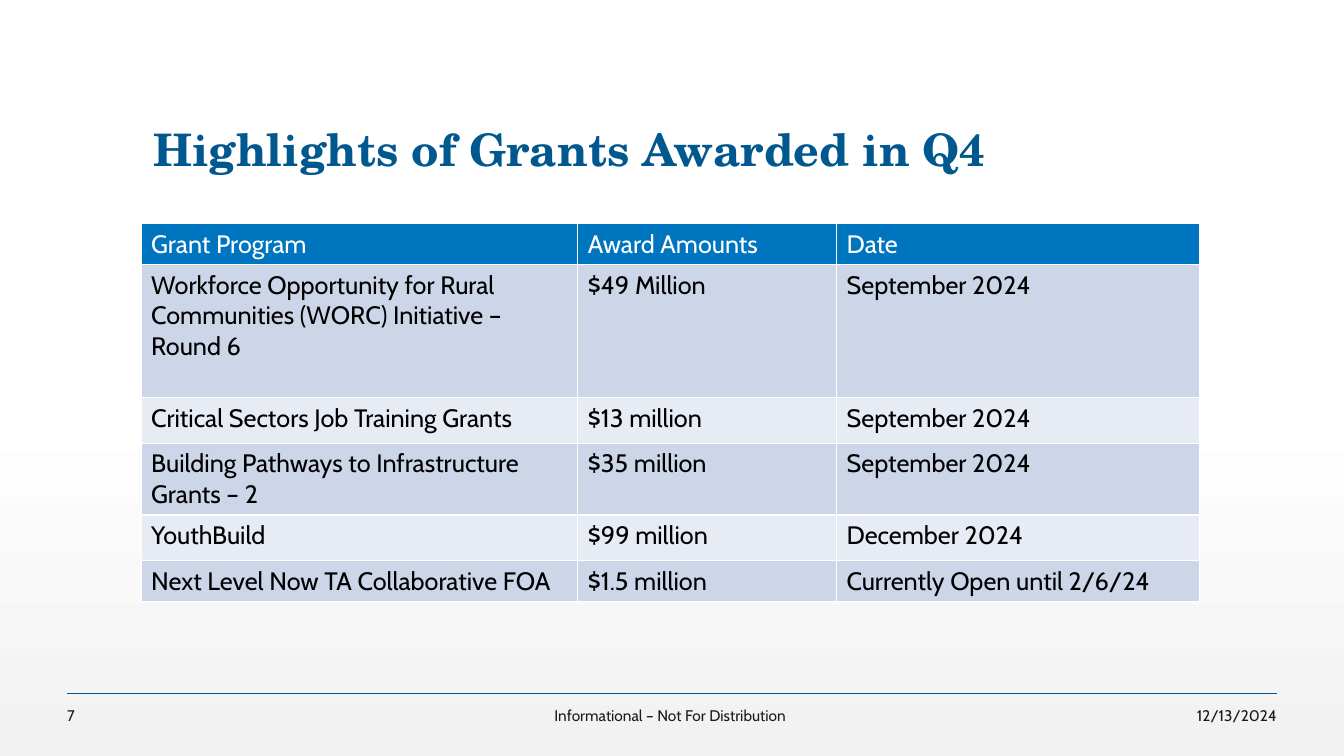
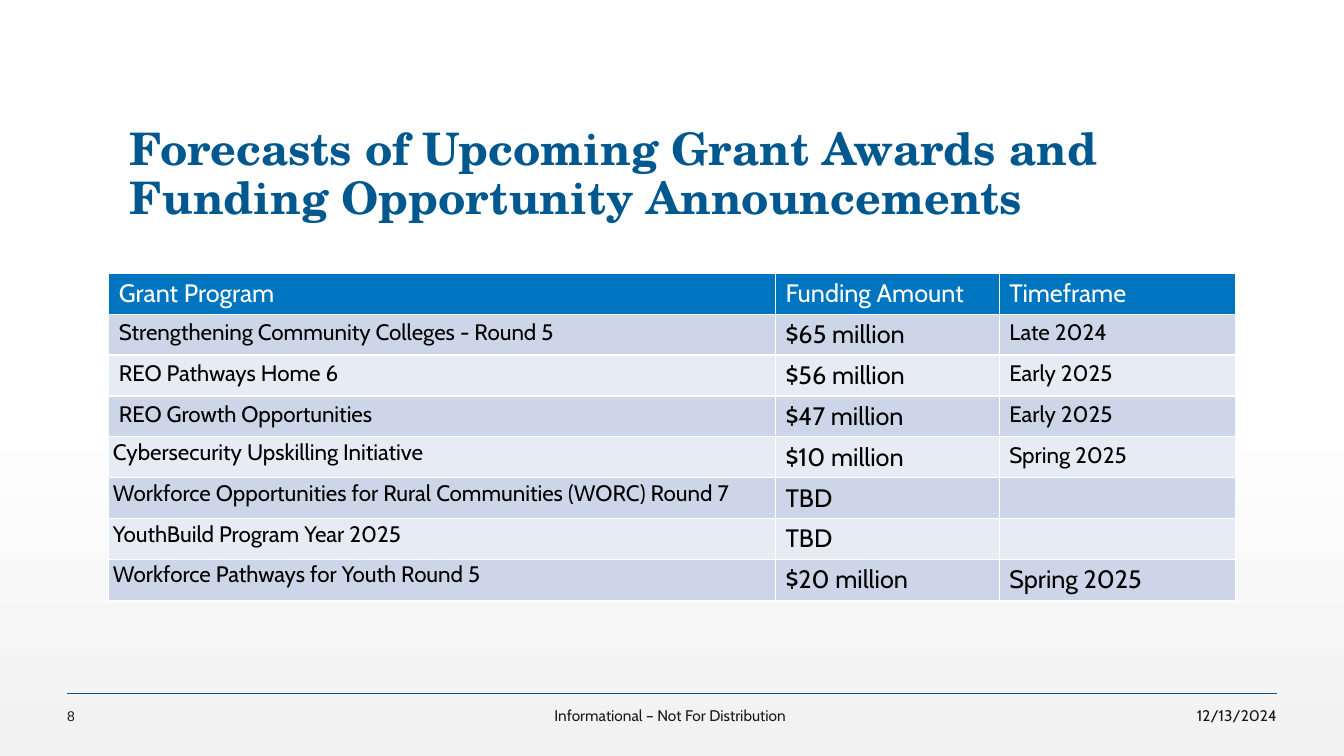
from dataclasses import dataclass

from lxml import etree
from pptx import Presentation
from pptx.dml.color import RGBColor
from pptx.enum.shapes import MSO_CONNECTOR
from pptx.enum.text import MSO_ANCHOR, MSO_AUTO_SIZE, PP_ALIGN
from pptx.oxml.ns import qn
from pptx.util import Inches, Pt

LEFT, MID, RIGHT = PP_ALIGN.LEFT, PP_ALIGN.CENTER, PP_ALIGN.RIGHT
CENTER, BOTTOM = MSO_ANCHOR.MIDDLE, MSO_ANCHOR.BOTTOM
FIXED, STRAIGHT = MSO_AUTO_SIZE.NONE, MSO_CONNECTOR.STRAIGHT


@dataclass(frozen=True)
class Theme:
    navy: str = "00588F"
    blue: str = "0075BF"
    bands: tuple = ("E7ECF4", "CCD6E8")
    white: str = "FFFFFF"
    gray: str = "F2F2F2"
    ink: str = "1A1A1A"
    black: str = "000000"
    serif: str = "TeX Gyre Schola"
    sans: str = "Cabin"
    plain: str = "Arial"
    head: int = 32
    body: int = 18
    small: int = 16
    foot: int = 11
    tiny: int = 10


T = Theme()
WIDE, HIGH = Inches(13.33), Inches(7.5)
COL, ROW = WIDE / 20, HIGH / 20


def place(x, y, w, h):
    return [int(n) for n in (x * COL, y * ROW, w * COL, h * ROW)]


def write(para, text, face, size, tint, bold=False):
    run = para.add_run()
    run.text = text
    run.font.name = face
    run.font.size = Pt(size)
    run.font.bold = bold
    run.font.color.rgb = RGBColor.from_string(tint)


PAGES = [
    {
        "title": "Highlights of Grants Awarded in Q4",
        "box": (2.13, 2.64, 15.75, 2.16),
        "spot": (2.1, 5.92),
        "cols": (6.5, 3.85, 5.4),
        "rows": (1.08, 3.52, 1.21, 1.88, 1.21, 1.08),
        "sizes": (T.body, T.body, T.body),
        "odd": {},
        "tight": (),
        "page": ("7", T.sans, T.foot),
        "data": [
            ("Grant Program", "Award Amounts", "Date"),
            ("Workforce Opportunity for Rural Communities (WORC) Initiative – Round 6",
             "$49 Million", "September 2024"),
            ("Critical Sectors Job Training Grants", "$13 million", "September 2024"),
            ("Building Pathways to Infrastructure Grants – 2", "$35 million", "September 2024"),
            ("YouthBuild", "$99 million", "December 2024"),
            ("Next Level Now TA Collaborative FOA", "$1.5 million", "Currently Open until 2/6/24"),
        ],
    },
    {
        "title": "Forecasts of Upcoming Grant Awards and Funding Opportunity Announcements",
        "box": (1.78, 2.91, 16.92, 3.15),
        "spot": (1.62, 7.23),
        "cols": (9.92, 3.33, 3.51),
        "rows": (1.08,) * 8,
        "sizes": (T.small, T.body, T.small),
        "odd": {(7, 2): T.body},
        "tight": (4, 5, 6, 7),
        "page": ("8", T.plain, T.tiny),
        "data": [
            ("Grant Program", "Funding Amount", "Timeframe"),
            ("Strengthening Community Colleges - Round 5", "$65 million", "Late 2024"),
            ("REO Pathways Home 6", "$56 million", "Early 2025"),
            ("REO Growth Opportunities", "$47 million", "Early 2025"),
            ("Cybersecurity Upskilling Initiative", "$10 million", "Spring 2025"),
            ("Workforce Opportunities for Rural Communities (WORC) Round 7", "TBD", ""),
            ("YouthBuild Program Year 2025", "TBD", ""),
            ("Workforce Pathways for Youth Round 5", "$20 million", "Spring 2025"),
        ],
    },
]

deck = Presentation()
deck.slide_width, deck.slide_height = WIDE, HIGH

fill = deck.slide_master.background.fill
fill.gradient()
fill.gradient_angle = 270
for stop, at, tint in zip(fill.gradient_stops, (0.53, 1), (T.white, T.gray)):
    stop.position = at
    stop.color.rgb = RGBColor.from_string(tint)

for page in PAGES:
    slide = deck.slides.add_slide(deck.slide_layouts[5])

    rule = slide.shapes.add_connector(
        STRAIGHT, int(COL), int(18.35 * ROW), int(19 * COL), int(18.35 * ROW))
    rule.line.color.rgb = RGBColor.from_string(T.navy)
    rule.line.width = Pt(1)
    etree.SubElement(rule._element.spPr, qn("a:effectLst"))

    title = slide.shapes.title
    title.left, title.top, title.width, title.height = place(*page["box"])
    frame = title.text_frame
    frame.auto_size = FIXED
    frame.word_wrap = True
    frame.vertical_anchor = BOTTOM
    para = frame.paragraphs[0]
    para.alignment = LEFT
    para.line_spacing = 0.9
    write(para, page["title"], T.serif, T.head, T.navy, True)

    data, cols, rows = page["data"], page["cols"], page["rows"]
    table = slide.shapes.add_table(
        len(data), len(cols), *place(*page["spot"], sum(cols), sum(rows))).table
    for col, wide in zip(table.columns, cols):
        col.width = int(wide * COL)
    for row, high in zip(table.rows, rows):
        row.height = int(high * ROW)

    for r, line in enumerate(data):
        for c, text in enumerate(line):
            cell = table.cell(r, c)
            if c == 0 and r in page["tight"]:
                cell.margin_left = cell.margin_right = Inches(0.04)
                cell.margin_top = cell.margin_bottom = Inches(0.02)
            props = cell._tc.get_or_add_tcPr()
            for side in ("a:lnL", "a:lnR", "a:lnT", "a:lnB"):
                edge = etree.SubElement(props, qn(side), w=str(Pt(1)))
                solid = etree.SubElement(edge, qn("a:solidFill"))
                etree.SubElement(solid, qn("a:srgbClr"), val=T.white)
            cell.fill.solid()
            cell.fill.fore_color.rgb = RGBColor.from_string(T.bands[r % 2] if r else T.blue)
            if text:
                size = page["odd"].get((r, c), page["sizes"][c]) if r else T.body
                write(cell.text_frame.paragraphs[0], text, T.sans, size,
                      T.black if r else T.white)

    feet = [
        (1, 1.5, LEFT, 0, 0.1, *page["page"]),
        (2.85, 14.25, MID, 0.1, 0.1, "Informational – Not For Distribution", T.sans, T.foot),
        (17.41, 1.59, RIGHT, 0.1, 0, "12/13/2024", T.sans, T.foot),
    ]
    for x, wide, side, near, far, text, face, size in feet:
        frame = slide.shapes.add_textbox(*place(x, 18.61, wide, 0.64)).text_frame
        frame.word_wrap = True
        frame.vertical_anchor = CENTER
        frame.margin_left, frame.margin_right = Inches(near), Inches(far)
        para = frame.paragraphs[0]
        para.alignment = side
        write(para, text, face, size, T.ink)

deck.save("out.pptx")
